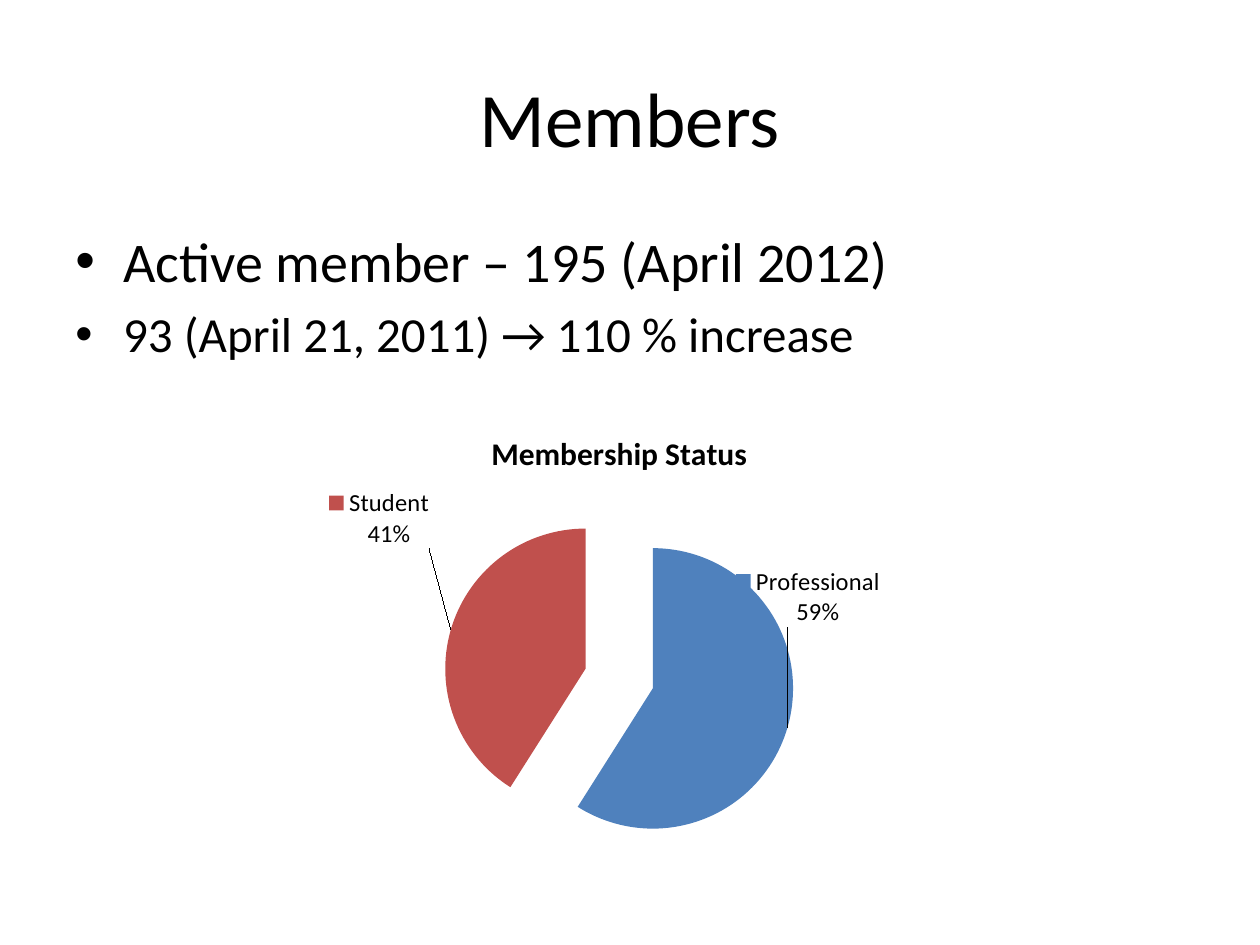
from pptx import Presentation
from pptx.chart.data import CategoryChartData
from pptx.dml.color import RGBColor
from pptx.enum.chart import XL_CHART_TYPE as ChartType, XL_LABEL_POSITION as LabelPosition
from pptx.enum.text import MSO_ANCHOR as Anchor, PP_ALIGN as Align
from pptx.oxml import parse_xml
from pptx.oxml.ns import nsdecls, qn
from pptx.util import Inches, Pt

COLORS = {"text": "000000", "professional": "4F81BD", "student": "C0504D"}
FONT = "Calibri"
TITLE = "Members"
BULLETS = [("Active member – 195 (April 2012)", 32),
           ("93 (April 21, 2011) → 110 % increase", 28)]
CHART_TITLE = "Membership Status"
SLICES = [
    {"name": "Professional", "share": 59, "color": "professional", "shift": (-0.08, -0.33)},
    {"name": "Student", "share": 41, "color": "student", "shift": (-0.02, -0.16)},
]
PIE_AREA = {"x": 0.26, "y": 0.19, "w": 0.48, "h": 0.71}
EXPLOSION = 25
LABEL_FLAGS = {"showLegendKey": 1, "showVal": 0, "showCatName": 1,
               "showSerName": 0, "showPercent": 1}


def style_font(font, size, bold=False):
    font.name, font.size, font.bold = FONT, Pt(size), bold
    font.color.rgb = RGBColor.from_string(COLORS["text"])


def add_text(page, lines, left, top, width, height,
             align=Align.LEFT, anchor=Anchor.TOP, bullet=False):
    frame = page.shapes.add_textbox(*map(Inches, (left, top, width, height))).text_frame
    frame.word_wrap, frame.vertical_anchor = True, anchor
    for index, (text, size) in enumerate(lines):
        para = frame.add_paragraph() if index else frame.paragraphs[0]
        para.alignment = align
        if index:
            para.space_before = Pt(size * 0.2)
        if bullet:
            props = para._p.get_or_add_pPr()
            props.set("marL", str(Inches(0.38)))
            props.set("indent", str(-Inches(0.38)))
            props.append(parse_xml(f'<a:buFont {nsdecls("a")} typeface="Arial"/>'))
            props.append(parse_xml(f'<a:buChar {nsdecls("a")} char="•"/>'))
        span = para.add_run()
        span.text = text
        style_font(span.font, size)


def manual_layout(places, inner=False):
    target = '<c:layoutTarget val="inner"/>' if inner else ""
    modes = '<c:xMode val="edge"/><c:yMode val="edge"/>' if inner else ""
    values = "".join(f'<c:{key} val="{value}"/>' for key, value in places.items())
    return parse_xml(f'<c:layout {nsdecls("c")}><c:manualLayout>{target}{modes}{values}'
                     '</c:manualLayout></c:layout>')


def add_pie(page, left, top, width, height):
    data = CategoryChartData()
    data.categories = [part["name"] for part in SLICES]
    data.add_series("", [part["share"] for part in SLICES])
    chart = page.shapes.add_chart(
        ChartType.PIE, *map(Inches, (left, top, width, height)), data).chart
    style_font(chart.font, 14)
    chart.has_legend = False
    chart.has_title = True
    chart.chart_title.text_frame.text = CHART_TITLE
    style_font(chart.chart_title.text_frame.paragraphs[0].runs[0].font, 18, bold=True)

    area = chart._chartSpace.find(".//" + qn("c:plotArea"))
    for layout in area.findall(qn("c:layout")):
        area.remove(layout)
    area.insert(0, manual_layout(PIE_AREA, inner=True))

    plot = chart.plots[0]
    plot.vary_by_categories = True
    series = plot.series[0]
    for index, part in enumerate(SLICES):
        point = series.points[index]
        point.format.fill.solid()
        point.format.fill.fore_color.rgb = RGBColor.from_string(COLORS[part["color"]])
        style_font(point.data_label.font, 14)
        point.data_label.position = LabelPosition.OUTSIDE_END
    node = series._element
    node.find(qn("c:dPt")).addprevious(
        parse_xml(f'<c:explosion {nsdecls("c")} val="{EXPLOSION}"/>'))
    for part, label in zip(SLICES, node.findall(".//" + qn("c:dLbl"))):
        label.insert(1, manual_layout(dict(zip("xy", part["shift"]))))
        for flag, value in LABEL_FLAGS.items():
            label.find(qn("c:" + flag)).set("val", str(value))
        label.append(parse_xml(f'<c:separator {nsdecls("c")}>\n</c:separator>'))


deck = Presentation()
deck.slide_width, deck.slide_height = Inches(10), Inches(7.5)
page = deck.slides.add_slide(deck.slide_layouts[6])
add_text(page, [(TITLE, 44)], 0.5, 0.3, 9, 1.25, align=Align.CENTER, anchor=Anchor.MIDDLE)
add_text(page, BULLETS, 0.5, 1.75, 9, 4.95, bullet=True)
add_pie(page, 2, 3.25, 5.83, 3.92)
deck.save("out.pptx")
